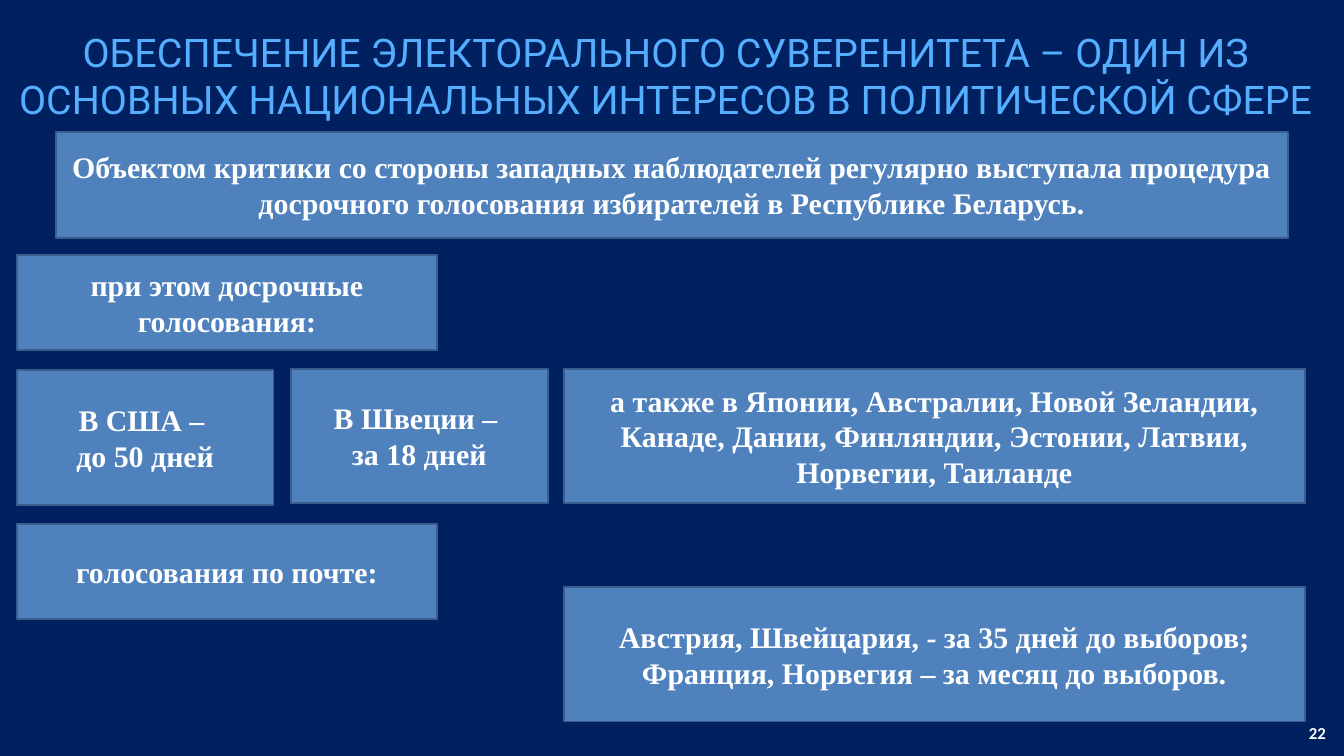
"""Builds the slide on early and postal voting."""
from pptx import Presentation
from pptx.dml.color import RGBColor
from pptx.enum.shapes import MSO_SHAPE as SHAPE
from pptx.enum.text import MSO_ANCHOR as ANCHOR, PP_ALIGN as ALIGN
from pptx.util import Cm, Pt

NAVY = RGBColor(0x00, 0x20, 0x60)
BLUE = RGBColor(0x4F, 0x81, 0xBD)
EDGE = RGBColor(0x3A, 0x5F, 0x8C)
SKY = RGBColor(0x56, 0xAE, 0xFF)
WHITE = RGBColor(0xFF, 0xFF, 0xFF)

TITLE = {"name": "Roboto", "size": Pt(42.2), "bold": False}
BODY = {"name": "Times New Roman", "size": Pt(32), "bold": True}
NUMBER = {"name": "Calibri", "size": Pt(18), "bold": True}


class SlideBuilder:
    def __init__(self, prs):
        self.s = prs.slides.add_slide(prs.slide_layouts[6])
        fill = self.s.background.fill
        fill.solid()
        fill.fore_color.rgb = NAVY

    def add_lines(self, tf, lines, style, color, align=ALIGN.CENTER, spacing=None):
        tf.word_wrap = True
        for i, line in enumerate(lines):
            p = tf.add_paragraph() if i else tf.paragraphs[0]
            p.text = line
            p.alignment = align
            p.line_spacing = spacing
            for r in p.runs:
                for key, value in style.items():
                    setattr(r.font, key, value)
                r.font.color.rgb = color

    def title(self, text, *box):
        tf = self.s.shapes.add_textbox(*map(Cm, box)).text_frame
        for side in ("left", "top", "right", "bottom"):
            setattr(tf, f"margin_{side}", 0)
        self.add_lines(tf, [text], TITLE, SKY, spacing=Pt(50.6))

    def number(self, text, *box):
        tf = self.s.shapes.add_textbox(*map(Cm, box)).text_frame
        tf.vertical_anchor = ANCHOR.MIDDLE
        self.add_lines(tf, [text], NUMBER, WHITE, ALIGN.RIGHT)

    def panel(self, lines, *box):
        sp = self.s.shapes.add_shape(SHAPE.RECTANGLE, *map(Cm, box))
        sp.shadow.inherit = False
        sp.fill.solid()
        sp.fill.fore_color.rgb = BLUE
        sp.line.color.rgb = EDGE
        sp.line.width = Pt(2)
        sp.text_frame.vertical_anchor = ANCHOR.MIDDLE
        self.add_lines(sp.text_frame, lines, BODY, WHITE)


def main():
    prs = Presentation()
    prs.slide_width, prs.slide_height = Cm(50.8), Cm(28.58)
    slide = SlideBuilder(prs)

    slide.number("22", 44.45, 27.2, 5.92, 1.02)
    slide.title("ОБЕСПЕЧЕНИЕ ЭЛЕКТОРАЛЬНОГО СУВЕРЕНИТЕТА – ОДИН ИЗ "
                "ОСНОВНЫХ НАЦИОНАЛЬНЫХ ИНТЕРЕСОВ В ПОЛИТИЧЕСКОЙ СФЕРЕ",
                0, 1.07, 50.37, 3.6)
    slide.panel(["Объектом критики со стороны западных наблюдателей регулярно "
                 "выступала процедура досрочного голосования избирателей "
                 "в Республике Беларусь."], 2.11, 4.98, 46.56, 4.01)

    left, right, wide = 0.64, 21.31, 28.02
    for text, top in (("при этом досрочные голосования:", 9.63),
                      ("голосования по почте:", 19.81)):
        slide.panel([text], left, top, 15.88, 3.6)

    row, height = 13.94, 5.08
    slide.panel(["В США – \vдо 50 дней"], left, 14, 9.7, height)
    slide.panel(["В Швеции – \vза 18 дней"], 11, row, 9.7, height)
    slide.panel(["а также в Японии, Австралии, Новой Зеландии, Канаде, Дании, "
                 "Финляндии, Эстонии, Латвии, Норвегии, Таиланде"],
                right, row, wide, height)
    slide.panel(["Австрия, Швейцария, - за 35 дней до выборов;",
                 "Франция, Норвегия – за месяц до выборов."],
                right, 22.2, wide, height)

    prs.save("out.pptx")


if __name__ == "__main__":
    main()
